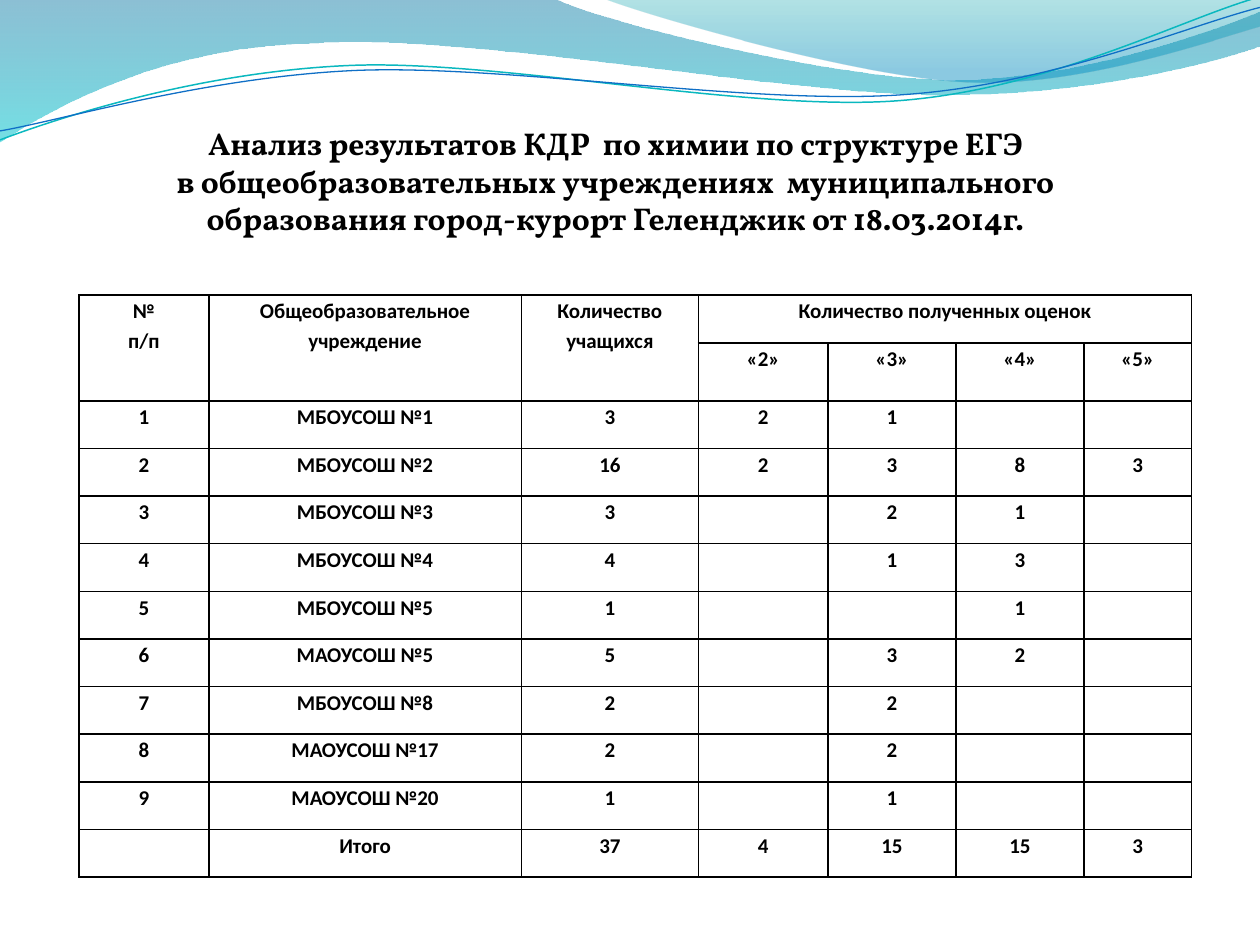
"""Builds the slide with chemistry exam results by school."""
from itertools import product
from math import cos, radians, sin

from lxml.etree import SubElement
from pptx import Presentation
from pptx.dml.color import RGBColor
from pptx.enum.text import MSO_ANCHOR, PP_ALIGN
from pptx.oxml.ns import qn
from pptx.util import Cm, Pt

TITLE = [
    "Анализ результатов КДР  по химии по структуре ЕГЭ",
    "в общеобразовательных учреждениях  муниципального образования "
    "город-курорт Геленджик от 18.03.2014г.",
]
SCHOOLS = [
    ("МБОУСОШ №1", "3", "2", "1", "", ""),
    ("МБОУСОШ №2", "16", "2", "3", "8", "3"),
    ("МБОУСОШ №3", "3", "", "2", "1", ""),
    ("МБОУСОШ №4", "4", "", "1", "3", ""),
    ("МБОУСОШ №5", "1", "", "", "1", ""),
    ("МАОУСОШ №5", "5", "", "3", "2", ""),
    ("МБОУСОШ №8", "2", "", "2", "", ""),
    ("МАОУСОШ №17", "2", "", "2", "", ""),
    ("МАОУСОШ №20", "1", "", "1", "", ""),
]
ROWS = [
    ("№\nп/п", "Общеобразовательное учреждение", "Количество учащихся",
     "Количество полученных оценок", "", "", ""),
    ("", "", "", "«2»", "«3»", "«4»", "«5»"),
    *[(str(number), *school) for number, school in enumerate(SCHOOLS, 1)],
    ("", "Итого", "37", "4", "15", "15", "3"),
]
MERGES = [((0, 0), (1, 0)), ((0, 1), (1, 1)), ((0, 2), (1, 2)), ((0, 3), (0, 6))]
COLUMN_WIDTHS = [2.62, 6.3, 3.57, 2.61, 2.58, 2.58, 2.17]
ROW_HEIGHTS = [0.96, 1.17] + [0.96] * 10
TILT = 357.3

WIDE_WAVE = [
    [(0, 0)],
    [(11.18, -0.03)],
    [(12.09, 0.43), (16.87, 1.6), (19.25, 1.6)],
    [(21.67, 1.6), (24.33, 0.66), (25.4, 0.23)],
    [(25.43, 0.91)],
    [(24.97, 1.12), (22.1, 1.93), (18.95, 1.91)],
    [(15.8, 1.91), (9.7, 0.71), (6.53, 0.86)],
    [(3.28, 0.91), (1.17, 2.11), (-0.03, 2.87)],
    [(0, 0)],
]
RIGHT_WAVE = [
    [(12.17, -0.03)],
    [(12.93, 0.28), (17.32, 1.57), (19.53, 1.65)],
    [(21.74, 1.75), (24.41, 0.81), (25.4, 0.53)],
    [(25.4, 0)],
    [(12.17, -0.03)],
]
TEAL_CURVE = [
    [(0, 2.82)],
    [(1.22, 2.36), (4.01, 1.45), (7.04, 1.32)],
    [(10.03, 1.19), (15.06, 2.26), (18.11, 2.03)],
    [(21.16, 1.8), (23.83, 0.38), (25.35, -0.05)],
]
BLUE_CURVE = [
    [(0, 2.64)],
    [(1.19, 2.44), (4.17, 1.55), (7.19, 1.42)],
    [(10.24, 1.3), (15.16, 2.13), (18.21, 1.91)],
    [(21.23, 1.7), (23.9, 0.53), (25.4, 0.15)],
]


def color(code):
    return RGBColor.from_string(code)


def level(segments, center, tilt):
    turn = radians(-tilt)
    middle_x, middle_y = center
    return [[(middle_x + (x - middle_x) * cos(turn) - (y - middle_y) * sin(turn),
              middle_y + (x - middle_x) * sin(turn) + (y - middle_y) * cos(turn))
             for x, y in segment] for segment in segments]


class SlideBuilder:
    ink = "000000"
    title_font, title_size = "Vollkorn", 18
    table_font, table_size = "Calibri", 12

    def __init__(self, page):
        self.page = page

    def style(self, para, font, size):
        para.alignment = PP_ALIGN.CENTER
        para.font.name, para.font.size = font, Pt(size)
        para.font.bold = True
        para.font.color.rgb = color(self.ink)

    def outline(self, shapes, segments, close):
        start, *points = [(Cm(x), Cm(y)) for segment in segments for x, y in segment]
        builder = shapes.build_freeform(*start)
        builder.add_line_segments(points, close=close)
        shape = builder.convert_to_shape()
        shape.shadow.inherit = False
        lines = shape._element.spPr.iter(qn("a:lnTo"))
        steps = iter(list(lines))
        for segment in segments[1:]:
            first, *others = [next(steps) for _ in segment]
            if others:
                first.tag = qn("a:cubicBezTo")
                for other in others:
                    first.append(other[0])
                    other.getparent().remove(other)
        return shape

    def wave(self, segments, stops):
        shape = self.outline(self.page.shapes, segments, True)
        shape.line.fill.background()
        shape.fill.gradient()
        shape.fill.gradient_angle = 270
        for stop, (position, code, _) in zip(shape.fill.gradient_stops, stops):
            stop.position = position
            stop.color.rgb = color(code)
        for tint, (_, _, opacity) in zip(shape._element.spPr.iter(qn("a:srgbClr")), stops):
            SubElement(tint, qn("a:alpha"), val=str(opacity * 1000))

    def curves(self, items):
        group = self.page.shapes.add_group_shape()
        for segments, center, code, width in items:
            shape = self.outline(group.shapes, level(segments, center, TILT), False)
            shape.rotation = TILT
            shape.fill.background()
            shape.line.color.rgb = color(code)
            shape.line.width = Pt(width)

    def title(self, lines, left, top, width, height):
        box = self.page.shapes.add_textbox(Cm(left), Cm(top), Cm(width), Cm(height))
        frame = box.text_frame
        frame.word_wrap = True
        frame.text = "\n".join(lines)
        for para in frame.paragraphs:
            self.style(para, self.title_font, self.title_size)

    def border(self, cell):
        properties = cell._tc.get_or_add_tcPr()
        for side in ("lnL", "lnR", "lnT", "lnB"):
            line = SubElement(properties, qn(f"a:{side}"), w=str(Pt(1)))
            fill = SubElement(line, qn("a:solidFill"))
            SubElement(fill, qn("a:srgbClr"), val=self.ink)

    def cell(self, cell, text):
        self.border(cell)
        cell.fill.background()
        cell.margin_left = cell.margin_right = Cm(0.18)
        cell.margin_top = cell.margin_bottom = 0
        cell.vertical_anchor = MSO_ANCHOR.TOP
        cell.text = text
        for para in cell.text_frame.paragraphs:
            self.style(para, self.table_font, self.table_size)
            if text:
                para.line_spacing = 1.15

    def table(self, rows, left, top):
        frame = self.page.shapes.add_table(
            len(rows), len(COLUMN_WIDTHS), Cm(left), Cm(top),
            Cm(sum(COLUMN_WIDTHS)), Cm(sum(ROW_HEIGHTS)))
        table = frame.table
        table.first_row = table.horz_banding = False
        for column, width in zip(table.columns, COLUMN_WIDTHS):
            column.width = Cm(width)
        for row, height in zip(table.rows, ROW_HEIGHTS):
            row.height = Cm(height)
        for row, column in product(range(len(rows)), range(len(COLUMN_WIDTHS))):
            self.cell(table.cell(row, column), rows[row][column])
        for first, last in MERGES:
            table.cell(*first).merge(table.cell(*last))


def main():
    deck = Presentation()
    deck.slide_width, deck.slide_height = Cm(25.4), Cm(19.05)
    builder = SlideBuilder(deck.slides.add_slide(deck.slide_layouts[6]))
    builder.wave(WIDE_WAVE, [(0, "0074A1", 45), (1, "00C6CF", 55)])
    builder.wave(RIGHT_WAVE, [(0, "00A1A9", 30), (0.8, "008BBF", 45)])
    builder.curves([(TEAL_CURVE, (12.67, 1.46), "0AB8BF", 0.85),
                    (BLUE_CURVE, (12.69, 1.5), "0F6FC6", 0.75)])
    builder.title(TITLE, 1.4, 2.37, 22.02, 4.11)
    builder.table(ROWS, 1.59, 5.95)
    deck.save("out.pptx")


if __name__ == "__main__":
    main()
